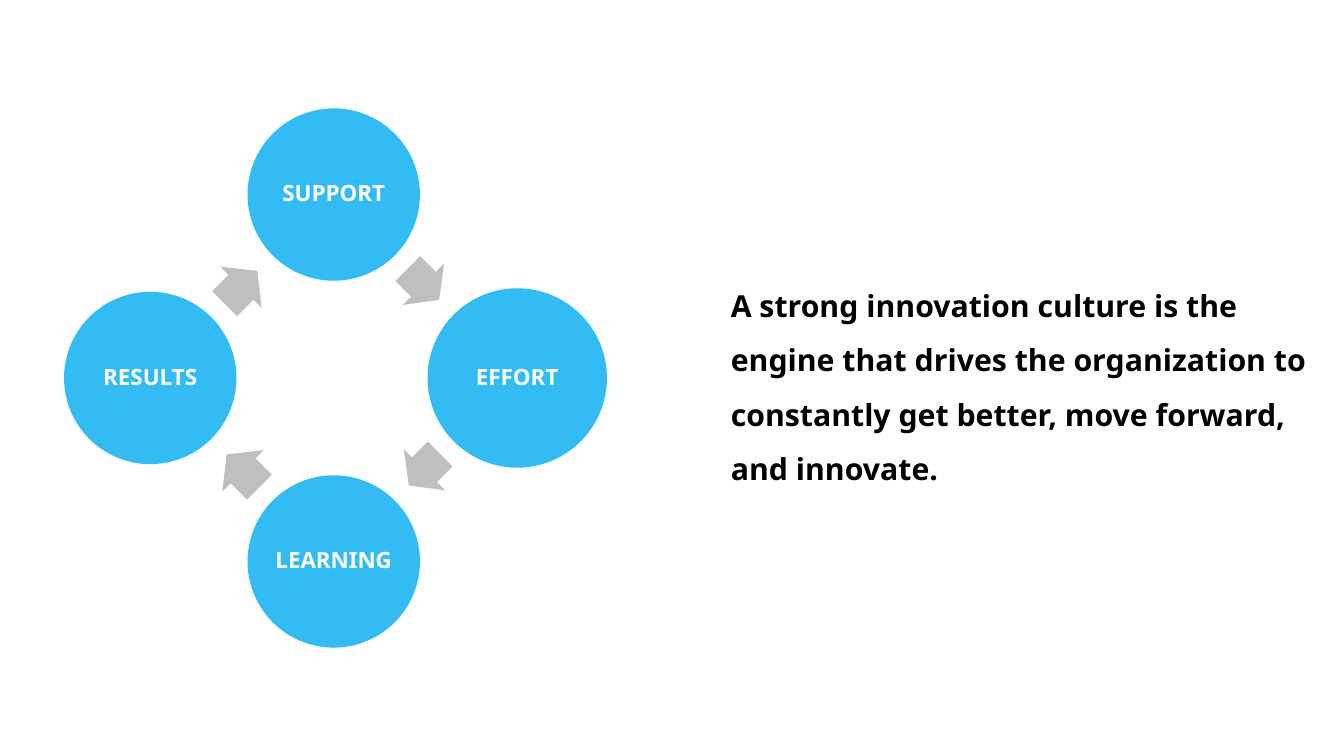
"""Build a slide with a four-step innovation culture cycle and its message."""
from math import cos, radians, sin

from lxml import etree
from pptx import Presentation
from pptx.dml.color import RGBColor
from pptx.enum.shapes import MSO_SHAPE
from pptx.enum.text import MSO_ANCHOR, PP_ALIGN
from pptx.oxml.ns import qn
from pptx.util import Inches, Pt

OVAL, ARROW = MSO_SHAPE.OVAL, MSO_SHAPE.RIGHT_ARROW
MIDDLE, LEFT, CENTER = MSO_ANCHOR.MIDDLE, PP_ALIGN.LEFT, PP_ALIGN.CENTER

MESSAGE = ("A strong innovation culture is the engine that drives the organization to "
           "constantly get better, move forward, and innovate.")
STEPS = [  # label, circle diameter, centre and length of the arrow to the next step
    ("SUPPORT", 1.71, (4.2, 2.82), 0.44),
    ("EFFORT", 1.78, (4.21, 4.66), 0.44),
    ("LEARNING", 1.71, (2.41, 4.67), 0.46),
    ("RESULTS", 1.71, (2.39, 2.85), 0.46),
]
COLORS = {"circle": "1CB5F2", "arrow": "BFBFBF", "label": "FFFFFF", "message": "000000"}
FONT = "Noto Sans"
RING_X, RING_Y, RING_RADIUS = 3.31, 3.75, 1.82
ARROW_BREADTH = 0.58
CIRCLE_OPACITY = 90


def write(owner, text, size, color, align, spacing, inset):
    frame = owner.text_frame
    frame.word_wrap = True
    frame.vertical_anchor = MIDDLE
    frame.margin_left = frame.margin_right = Inches(inset)
    frame.margin_top = frame.margin_bottom = Inches(0.02)
    paragraph = frame.paragraphs[0]
    paragraph.alignment = align
    paragraph.line_spacing = spacing
    run = paragraph.add_run()
    run.text = text
    run.font.name = FONT
    run.font.size = Pt(size)
    run.font.bold = True
    run.font.color.rgb = RGBColor.from_string(COLORS[color])


def add_centered(slide, preset, center, width, height, color):
    x, y = center
    shape = slide.shapes.add_shape(preset, Inches(x - width / 2), Inches(y - height / 2),
                                   Inches(width), Inches(height))
    shape.shadow.inherit = False
    shape.fill.solid()
    shape.fill.fore_color.rgb = RGBColor.from_string(COLORS[color])
    shape.line.fill.background()
    return shape


def set_opacity(shape, percent):
    color = shape.fill._xPr.find(qn("a:solidFill"))[0]
    etree.SubElement(color, qn("a:alpha")).set("val", str(percent * 1000))


def main():
    deck = Presentation()
    deck.slide_width, deck.slide_height = Inches(13.33), Inches(7.5)
    slide = deck.slides.add_slide(deck.slide_layouts[6])

    message = slide.shapes.add_textbox(Inches(7.15), Inches(2.51), Inches(5.96), Inches(2.48))
    write(message, MESSAGE, 21.6, "message", LEFT, 1.5, 0.1)

    turn = 360 / len(STEPS)
    for index, (label, diameter, arrow_center, arrow_length) in enumerate(STEPS):
        angle = radians(index * turn - 90)
        center = RING_X + RING_RADIUS * cos(angle), RING_Y + RING_RADIUS * sin(angle)
        circle = add_centered(slide, OVAL, center, diameter, diameter, "circle")
        set_opacity(circle, CIRCLE_OPACITY)
        write(circle, label, 16, "label", CENTER, 0.9, 0.02)

        arrow = add_centered(slide, ARROW, arrow_center, arrow_length, ARROW_BREADTH, "arrow")
        arrow.adjustments[0], arrow.adjustments[1] = 0.6, 0.5
        arrow.rotation = (index + 0.5) * turn

    deck.save("out.pptx")


if __name__ == "__main__":
    main()
